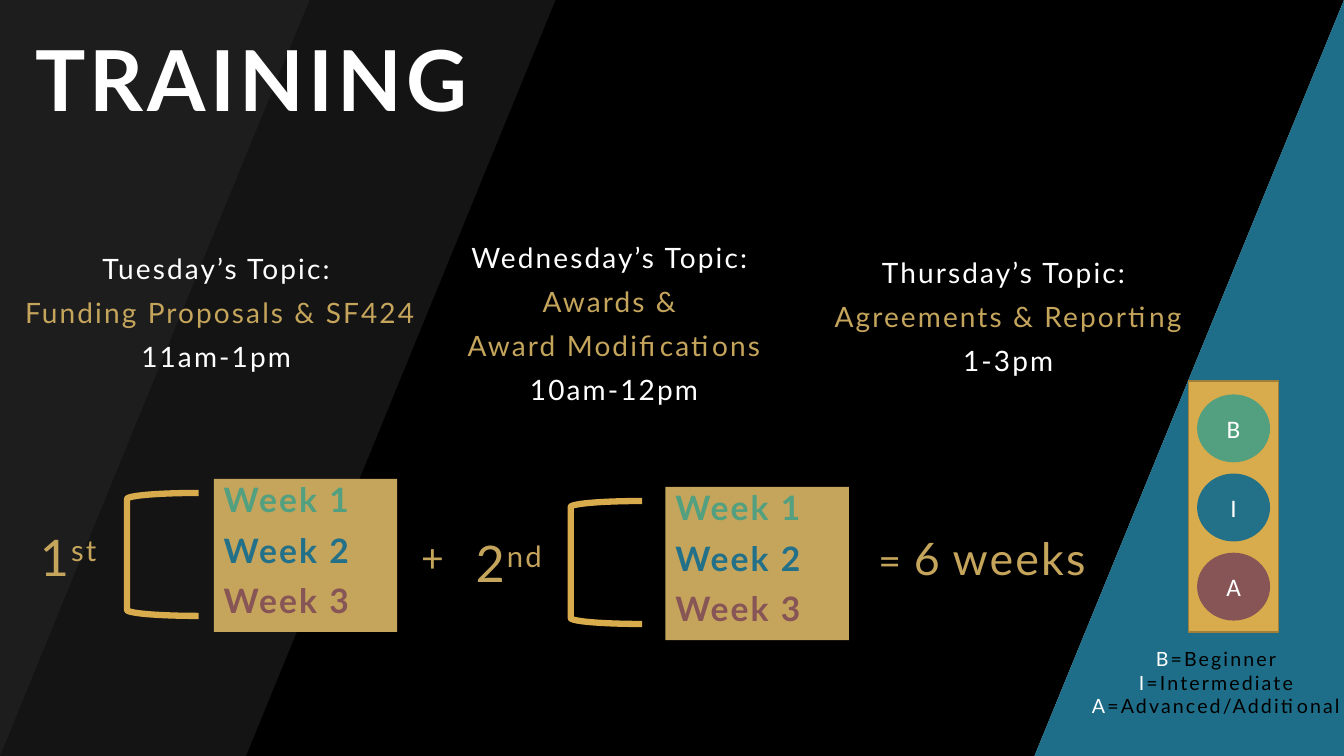
"""Build the training schedule slide: three weekly topics, two rounds and a level key."""
from pptx import Presentation
from pptx.dml.color import RGBColor
from pptx.enum.shapes import MSO_SHAPE
from pptx.enum.text import MSO_ANCHOR, PP_ALIGN
from pptx.oxml.ns import qn
from pptx.util import Inches, Pt
from lxml import etree

RECTANGLE, OVAL, BRACKET = MSO_SHAPE.RECTANGLE, MSO_SHAPE.OVAL, MSO_SHAPE.LEFT_BRACKET
TOP, MIDDLE = MSO_ANCHOR.TOP, MSO_ANCHOR.MIDDLE
LEFT, CENTER = PP_ALIGN.LEFT, PP_ALIGN.CENTER

THEME = {
    "font": "Lato", "badge_font": "Calibri",
    "white": "FFFFFF", "black": "000000", "teal": "136783",
    "gold": "C5A55C", "bright_gold": "D8AB4C", "gold_edge": "A07F38",
    "green": "53A080", "blue": "237089", "plum": "875555",
    "title": 60, "ordinal": 36, "total": 32, "sign": 28, "week": 24,
    "topic": 20, "badge": 18, "key": 14,
}

TITLE = "TRAINING"
TOPICS = [
    ((0.13, 2.48, 4.12, 1.52), "Tuesday’s Topic: ", ["Funding Proposals & SF424 "], "11am-1pm "),
    ((4.03, 2.37, 4.12, 1.52), "Wednesday’s Topic: ", ["Awards & ", "Award Modifications"], "10am-12pm"),
    ((7.77, 2.52, 4.46, 1.52), "Thursday’s Topic: ", ["Agreements & Reporting"], "1-3pm"),
]
WEEKS = [("Week 1", "green"), ("Week 2", "blue"), ("Week 3", "plum")]
ROUNDS = [
    {"number": "1", "suffix": "st", "label": (0.17, 5.17), "bracket": (1.26, 4.89), "weeks": (2.12, 4.75)},
    {"number": "2", "suffix": "nd", "label": (4.54, 5.23), "bracket": (5.66, 4.97), "weeks": (6.6, 4.83)},
]
PLUS = "+"
TOTAL = [("=", "sign"), (" ", "week"), ("6", "total"), (" ", "week"), ("weeks", "total")]
LEVELS = [("B", "Beginner", "green"), ("I", "Intermediate", "blue"), ("A", "Advanced/Additional", "plum")]
BACKDROP = [
    ([(0, 0), (13.33, 0), (10.26, 7.5), (0, 7.5)], "black", 100),
    ([(0, 0), (5.51, 0), (2.44, 7.5), (0, 7.5)], "white", 8),
    ([(0, 0), (3.07, 0), (0, 7.5)], "white", 4),
    ([(13.33, 0), (13.33, 7.5), (10.26, 7.5)], "teal", 95),
]


def color(name):
    return RGBColor.from_string(THEME[name])


def paint(shape, fill=None, edge=None, width=1):
    shape.shadow.inherit = False
    if fill:
        shape.fill.solid()
        shape.fill.fore_color.rgb = color(fill)
    else:
        shape.fill.background()
    if edge:
        shape.line.color.rgb = color(edge)
        shape.line.width = Pt(width)
    else:
        shape.line.fill.background()


def add_band(slide, corners, fill, opacity):
    points = [(Inches(x), Inches(y)) for x, y in corners]
    builder = slide.shapes.build_freeform(*points[0])
    builder.add_line_segments(points[1:], close=True)
    band = builder.convert_to_shape()
    paint(band, fill)
    if opacity < 100:
        tint = band.fill._xPr.find(qn("a:solidFill"))[0]
        etree.SubElement(tint, qn("a:alpha")).set("val", str(opacity * 1000))


def add_preset(slide, kind, box, **look):
    shape = slide.shapes.add_shape(kind, *map(Inches, box))
    paint(shape, **look)
    return shape


def add_label(slide, box, lines, size, **style):
    label = slide.shapes.add_textbox(*map(Inches, box))
    write(label, lines, size, **style)


def write(shape, lines, size, align=CENTER, anchor=TOP, font="font", bold=False,
          tracking=1.5, leading=None, gap=0):
    """Fill a shape with lines, each a list of (text, color, run options)."""
    frame = shape.text_frame
    frame.word_wrap = True
    frame.vertical_anchor = anchor
    for index, line in enumerate(lines):
        paragraph = frame.paragraphs[0] if index == 0 else frame.add_paragraph()
        paragraph.alignment = align
        if leading:
            paragraph.line_spacing = leading
        if index:
            paragraph.space_before = Pt(gap)
        paragraph.font.name = THEME[font]
        paragraph.font.size = Pt(THEME[size])
        paragraph.font.bold = bold
        shared = len({tone for _, tone, *_ in line}) == 1
        if shared:
            paragraph.font.color.rgb = color(line[0][1])
        for text, tone, *options in line:
            run = paragraph.add_run()
            run.text = text
            if not shared:
                run.font.color.rgb = color(tone)
            properties = run._r.get_or_add_rPr()
            if tracking:
                properties.set("spc", str(int(tracking * 100)))
            for option in options:
                if option == "superscript":
                    properties.set("baseline", "30000")
                else:
                    run.font.size = Pt(THEME[option])


def add_round(slide, part):
    week_lines = [[week] for week in WEEKS]
    panel = add_preset(slide, RECTANGLE, (*part["weeks"], 1.82, 1.52), fill="gold")
    write(panel, week_lines, "week", align=LEFT, bold=True, leading=0.9, gap=10)
    add_preset(slide, BRACKET, (*part["bracket"], 0.71, 1.22), edge="bright_gold", width=4.5)
    ordinal = [(part["number"], "gold"), (part["suffix"], "gold", "superscript")]
    add_label(slide, (*part["label"], 1.01, 0.71), [ordinal], "ordinal")


def add_level_key(slide):
    add_preset(slide, RECTANGLE, (11.79, 3.78, 0.89, 2.49), fill="bright_gold", edge="gold_edge")
    for index, (letter, _, tone) in enumerate(LEVELS):
        box = (11.88, 3.92 + index * 0.785, 0.71, 0.66)
        badge = add_preset(slide, OVAL, box, fill=tone, edge=tone)
        write(badge, [[(letter, "white")]], "badge", anchor=MIDDLE, font="badge_font", tracking=0)
    key = [[(letter, "white"), (f"={name}", "black")] for letter, name, _ in LEVELS]
    add_label(slide, (10.7, 6.37, 2.72, 0.81), key, "key")


def main():
    deck = Presentation()
    deck.slide_width, deck.slide_height = Inches(13.33), Inches(7.5)
    slide = deck.slides.add_slide(deck.slide_layouts[6])
    for corners, fill, opacity in BACKDROP:
        add_band(slide, corners, fill, opacity)
    add_label(slide, (0.25, 0.03, 10.23, 1.61), [[(TITLE, "white")]], "title",
              align=LEFT, anchor=MIDDLE, bold=True, tracking=3, leading=0.9)
    for box, day, subjects, hours in TOPICS:
        lines = [[(day, "white")], *[[(subject, "gold")] for subject in subjects], [(hours, "white")]]
        add_label(slide, box, lines, "topic", leading=0.9, gap=10)
    for part in ROUNDS:
        add_round(slide, part)
    add_label(slide, (3.94, 5.24, 0.7, 0.57), [[(PLUS, "gold")]], "sign")
    total = [(text, "gold", size) for text, size in TOTAL]
    add_label(slide, (8.56, 5.22, 2.36, 0.64), [total], "total")
    add_level_key(slide)
    deck.save("out.pptx")


if __name__ == "__main__":
    main()
